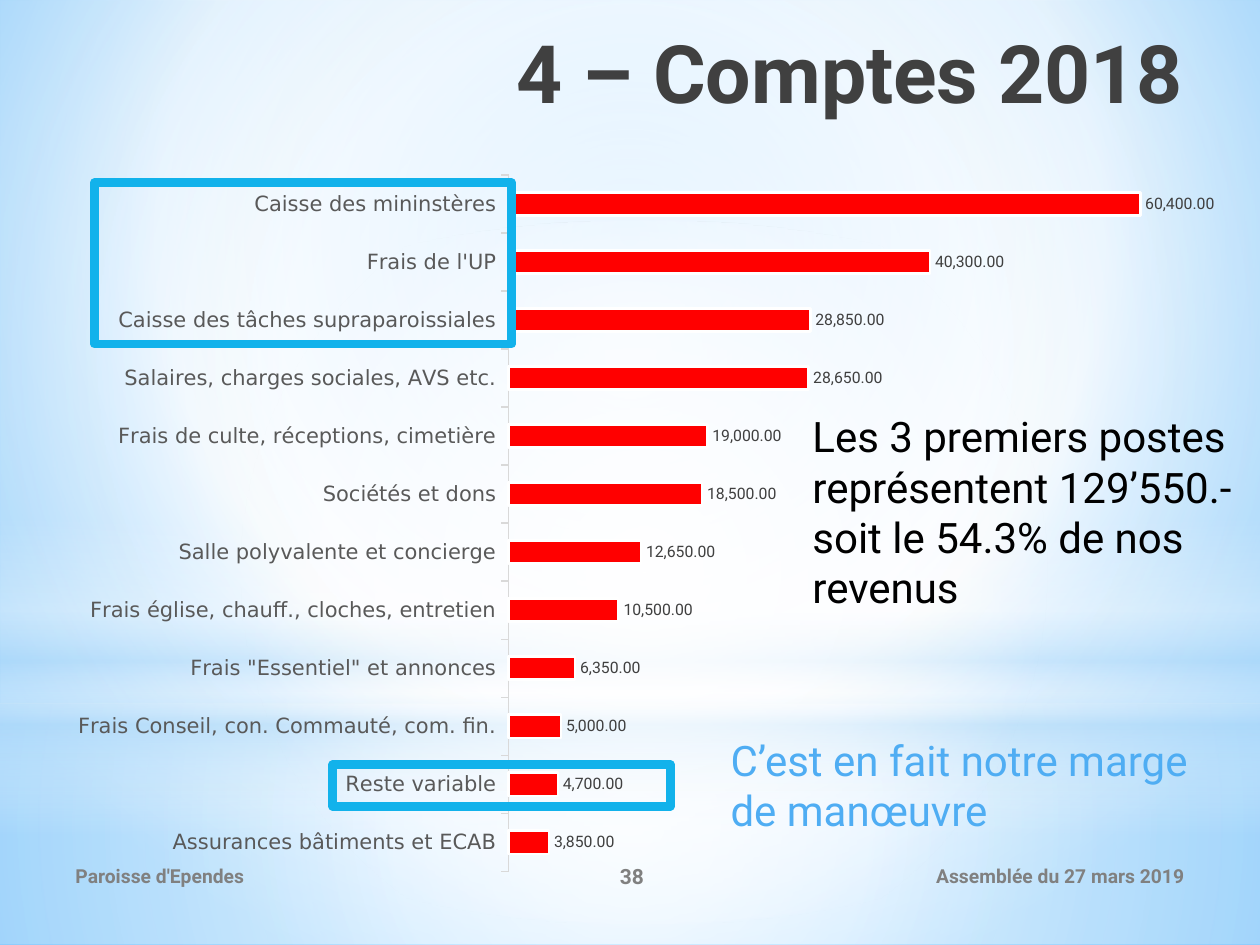
from lxml import etree
from pptx import Presentation
from pptx.chart.data import CategoryChartData
from pptx.dml.color import RGBColor
from pptx.enum.chart import XL_CHART_TYPE, XL_LABEL_POSITION, XL_TICK_MARK
from pptx.enum.shapes import MSO_SHAPE
from pptx.enum.text import MSO_ANCHOR, MSO_AUTO_SIZE, PP_ALIGN
from pptx.oxml import parse_xml
from pptx.oxml.ns import nsdecls, qn
from pptx.util import Pt

BAR = XL_CHART_TYPE.BAR_CLUSTERED
OUTSIDE_END = XL_LABEL_POSITION.OUTSIDE_END
TICK_OUT, TICK_NONE = XL_TICK_MARK.OUTSIDE, XL_TICK_MARK.NONE
RECTANGLE, OVAL = MSO_SHAPE.RECTANGLE, MSO_SHAPE.OVAL
TOP, MIDDLE = MSO_ANCHOR.TOP, MSO_ANCHOR.MIDDLE
LEFT, CENTER, RIGHT = PP_ALIGN.LEFT, PP_ALIGN.CENTER, PP_ALIGN.RIGHT
NO_AUTOFIT = MSO_AUTO_SIZE.NONE
FONT = "Roboto"
NUMBER_FORMAT = "#,##0.00"
CENTERED = (50, 50, 50, 50)

EXPENSES = [
    ("Assurances bâtiments et ECAB", 3850),
    ("Reste variable", 4700),
    ("Frais Conseil, con. Commauté, com. fin.", 5000),
    ('Frais "Essentiel" et annonces', 6350),
    ("Frais église, chauff., cloches, entretien", 10500),
    ("Salle polyvalente et concierge", 12650),
    ("Sociétés et dons", 18500),
    ("Frais de culte, réceptions, cimetière", 19000),
    ("Salaires, charges sociales, AVS etc.", 28650),
    ("Caisse des tâches supraparoissiales", 28850),
    ("Frais de l'UP", 40300),
    ("Caisse des mininstères", 60400),
]


def color(value):
    return RGBColor.from_string(value)


def points(box):
    return [Pt(length) for length in box]


def style_font(font, size, value, bold=False, name=FONT):
    font.name, font.size, font.bold = name, Pt(size), bold
    font.color.rgb = color(value)


def gradient(stops, focus=None):
    marks = "".join(
        f'<a:gs pos="{place * 1000}"><a:srgbClr val="{value}">'
        f'<a:alpha val="{opacity * 1000}"/></a:srgbClr></a:gs>'
        for place, value, opacity in stops
    )
    if focus:
        sides = " ".join(f'{side}="{part * 1000}"' for side, part in zip("ltrb", focus))
        shading = f'<a:path path="circle"><a:fillToRect {sides}/></a:path>'
    else:
        shading = '<a:lin ang="5400000" scaled="0"/>'
    return parse_xml(
        f'<a:gradFill {nsdecls("a")} rotWithShape="1"><a:gsLst>{marks}</a:gsLst>{shading}</a:gradFill>'
    )


def replace_solid_fill(parent, fill):
    parent.replace(parent.find(qn("a:solidFill")), fill)


def add_glow(page, kind, box, stops, focus=None):
    glow = page.shapes.add_shape(kind, *points(box))
    glow.shadow.inherit = False
    glow.line.fill.background()
    glow.fill.solid()
    replace_solid_fill(glow.element.spPr, gradient(stops, focus))


def add_backdrop(page, box):
    left, top, width, height = box
    page.background.fill.solid()
    replace_solid_fill(
        page.element.find(".//" + qn("p:bgPr")),
        gradient([(0, "9ED5FF", 100), (60, "FFFFFF", 100), (100, "5BB9FF", 100)], (20, 10, 20, 60)),
    )
    horizon = 402
    add_glow(page, RECTANGLE, (left, top + horizon, width, height - horizon),
             [(0, "FFFFFF", 91), (37, "FFFFFF", 76), (100, "B4DCFA", 79)], CENTERED)
    add_glow(page, RECTANGLE, (left, top, width, horizon),
             [(0, "FFFFFF", 89), (48, "FFFFFF", 62), (100, "B4DCFA", 79)], CENTERED)
    add_glow(page, RECTANGLE, (left, top + 296.6, width, 180),
             [(0, "FFFFFF", 0), (29, "FFFFFF", 30), (45, "B4DCFA", 40),
              (55, "FFFFFF", 26), (65, "B4DCFA", 60), (100, "FFFFFF", 0)])
    add_glow(page, OVAL, (left + 8, top + 126, width, horizon),
             [(0, "FFFFFF", 100), (56, "FFFFFF", 0)], CENTERED)


def fill_text(shape, text, size, value, align=LEFT, bold=False, anchor=TOP):
    frame = shape.text_frame
    frame.text = text
    frame.word_wrap = True
    frame.auto_size = NO_AUTOFIT
    frame.vertical_anchor = anchor
    para = frame.paragraphs[0]
    para.alignment = align
    style_font(para.runs[0].font, size, value, bold)


def add_text(page, box, *args, **kwargs):
    fill_text(page.shapes.add_textbox(*points(box)), *args, **kwargs)


def place_title(page, box):
    title = page.shapes.title
    title.left, title.top, title.width, title.height = points(box)
    fill_text(title, "4 – Comptes 2018", 46, "404040", RIGHT, True)
    title.element.getparent().append(title.element)


def add_footer(page, box):
    left, top, width, height = box
    parts = [
        ("Paroisse d'Ependes", 0, 264, 11, LEFT),
        ("38", 264, 122.4, 12, CENTER),
        ("Assemblée du 27 mars 2019", width - 198, 198, 11, RIGHT),
    ]
    for text, offset, part_width, size, align in parts:
        add_text(page, (left + offset, top, part_width, height),
                 text, size, "808080", align, True, MIDDLE)


def set_plot_area(chart, x, y, w, h):
    plot_area = chart.element.find(".//" + qn("c:plotArea"))
    layout = plot_area.find(qn("c:layout"))
    if layout is None:
        layout = etree.Element(qn("c:layout"))
        plot_area.insert(0, layout)
    manual = etree.SubElement(layout, qn("c:manualLayout"))
    settings = [("layoutTarget", "inner"), ("xMode", "edge"), ("yMode", "edge"),
                ("x", x), ("y", y), ("w", w), ("h", h)]
    for tag, value in settings:
        etree.SubElement(manual, qn("c:" + tag)).set("val", str(value))


def add_expense_chart(page, box):
    data = CategoryChartData(number_format=NUMBER_FORMAT)
    data.categories = [name for name, _ in EXPENSES]
    data.add_series("Series 1", [amount for _, amount in EXPENSES])
    chart = page.shapes.add_chart(BAR, *points(box), data).chart
    chart.has_legend = False
    chart.has_title = False
    style_font(chart.font, 10, "000000")
    set_plot_area(chart, 0.377, 0.041, 0.607, 0.948)

    names = chart.category_axis
    names.major_tick_mark, names.minor_tick_mark = TICK_OUT, TICK_NONE
    names.format.line.color.rgb = color("D9D9D9")
    names.format.line.width = Pt(0.75)
    style_font(names.tick_labels.font, 12, "595959", name="DejaVu Sans")

    amounts = chart.value_axis
    amounts.visible = False
    amounts.has_major_gridlines = False
    amounts.minimum_scale, amounts.maximum_scale = 0, 70000

    plot = chart.plots[0]
    plot.gap_width = 150
    plot.vary_by_categories = False
    bars = plot.series[0]
    bars.format.fill.solid()
    bars.format.fill.fore_color.rgb = color("FF0000")
    bars.format.line.color.rgb = color("FFFFFF")
    bars.format.line.width = Pt(1.5)
    labels = bars.data_labels
    labels.show_value = True
    labels.position = OUTSIDE_END
    labels.number_format = NUMBER_FORMAT
    labels.number_format_is_linked = False
    style_font(labels.font, 9, "404040")


def add_highlight(page, box):
    frame = page.shapes.add_shape(RECTANGLE, *points(box))
    frame.shadow.inherit = False
    frame.fill.background()
    frame.line.color.rgb = color("12B2EB")
    frame.line.width = Pt(5)
    etree.SubElement(frame.element.spPr.find(qn("a:ln")), qn("a:round"))


def main():
    deck = Presentation()
    deck.slide_width, deck.slide_height = Pt(720), Pt(540)
    page = deck.slides.add_slide(deck.slide_layouts[5])
    add_backdrop(page, (0, 0, 720, 540))
    add_footer(page, (36, 486, 648, 28.8))
    place_title(page, (105, 9.4, 578.2, 90.7))
    add_expense_chart(page, (31, 82.8, 689, 419.8))
    add_text(page, (457.2, 231.1, 256.3, 123.8),
             "Les 3 premiers postes représentent 129’550.- soit le 54.3% de nos revenus", 24, "000000")
    add_highlight(page, (190.1, 437, 193, 23.8))
    add_text(page, (410.4, 416.2, 300.2, 65.5), "C’est en fait notre marge de manœuvre", 24, "4FADF3")
    add_highlight(page, (54, 104.4, 238.3, 92.2))
    deck.save("out.pptx")


if __name__ == "__main__":
    main()
